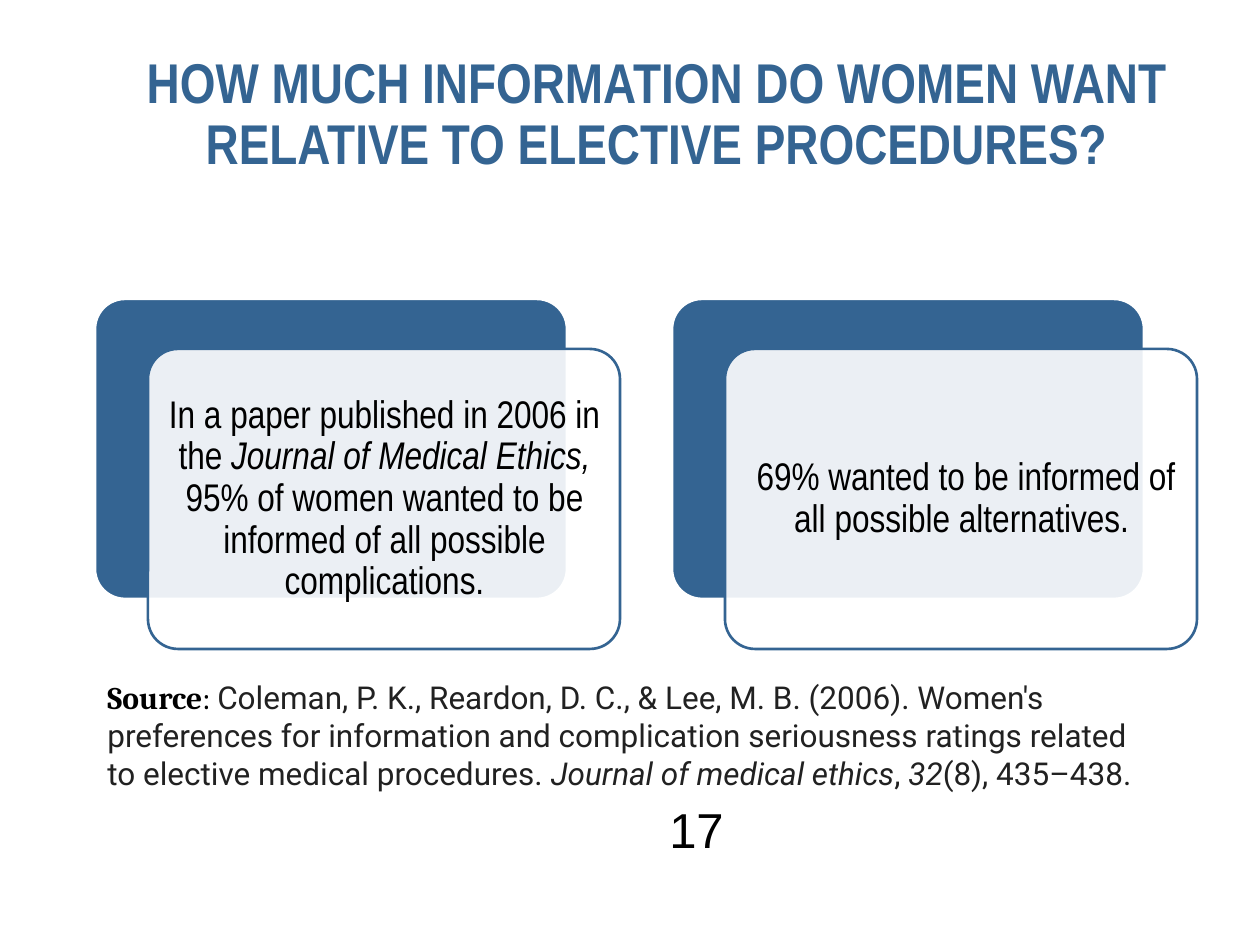
"""Builds a slide on how much information women want about elective procedures."""
from lxml.etree import SubElement
from pptx import Presentation
from pptx.dml.color import RGBColor
from pptx.enum.shapes import MSO_SHAPE as SHAPE
from pptx.enum.text import MSO_ANCHOR as ANCHOR, PP_ALIGN as ALIGN
from pptx.oxml.ns import qn
from pptx.util import Pt

PX = 914400 / 126
COLORS = {"blue": "346492", "white": "FFFFFF", "black": "000000", "ink": "212121"}


def add_text(box, runs, font, size, color, anchor=ANCHOR.MIDDLE, align=ALIGN.CENTER, spacing=None):
    area = slide.shapes.add_textbox(*(round(v * PX) for v in box))
    frame = area.text_frame
    frame.word_wrap = True
    frame.vertical_anchor = anchor
    paragraph = frame.paragraphs[0]
    paragraph.alignment = align
    paragraph.line_spacing = spacing
    paragraph.font.name = font
    paragraph.font.size = Pt(size)
    paragraph.font.color.rgb = RGBColor.from_string(COLORS[color])
    for words, italic in runs:
        run = paragraph.add_run()
        run.text = words
        if italic:
            run.font.italic = True
    return frame


def add_card(left, top, fill, line):
    card = slide.shapes.add_shape(SHAPE.ROUNDED_RECTANGLE, *(round(v * PX) for v in (left, top, 472, 300)))
    card.adjustments[0] = 0.1
    card.shadow.inherit = False
    card.fill.solid()
    card.fill.fore_color.rgb = RGBColor.from_string(COLORS[fill])
    card.line.color.rgb = RGBColor.from_string(COLORS[line])
    card.line.width = Pt(1.5)
    return card


prs = Presentation()
prs.slide_width, prs.slide_height = round(1260 * PX), round(945 * PX)
slide = prs.slides.add_slide(prs.slide_layouts[6])

title = add_text(
    (73, 32, 1168, 168),
    [("HOW MUCH INFORMATION DO WOMEN WANT RELATIVE TO ELECTIVE PROCEDURES?", False)],
    "Arial Narrow", 32, "blue", spacing=0.9,
)
title.paragraphs[0].font.bold = True

findings = [
    [
        ("In a paper published in 2006 in the ", False),
        ("Journal of Medical Ethics,", True),
        (" 95% of women wanted to be informed of all possible complications.", False),
    ],
    [(" 69% wanted to be informed of all possible alternatives.", False)],
]
for index, finding in enumerate(findings):
    left = 95 + 577 * index
    add_card(left, 299, "blue", "white")
    front = add_card(left + 53, 349, "white", "blue")
    tint = front.fill._xPr.find(qn("a:solidFill"))[0]
    SubElement(tint, qn("a:alpha"), val="90000")
    frame = add_text((left + 62, 358, 455, 282), finding, "Arial Narrow", 22, "black", spacing=0.9)
    frame.margin_left = frame.margin_right = round(11 * PX)
    frame.margin_top = frame.margin_bottom = round(11 * PX)

add_text((650, 794, 93, 69), [("17", False)], "Arial", 28, "black")

citation = [
    ("Source", False),
    (": ", False),
    ("Coleman, P. K., Reardon, D. C., & Lee, M. B. (2006). Women's preferences for information "
     "and complication seriousness ratings related to elective medical procedures. ", False),
    ("Journal of medical ethics", True),
    (", ", False),
    ("32", True),
    ("(8), 435–438.", False),
]
source = add_text((95, 672, 1071, 127), citation, "Roboto", 18, "ink", ANCHOR.TOP, ALIGN.LEFT)
label, colon = source.paragraphs[0].runs[:2]
label.font.bold = True
for run in (label, colon):
    run.font.name = "Cambria"
    run.font.color.rgb = RGBColor.from_string(COLORS["black"])

prs.save("out.pptx")
